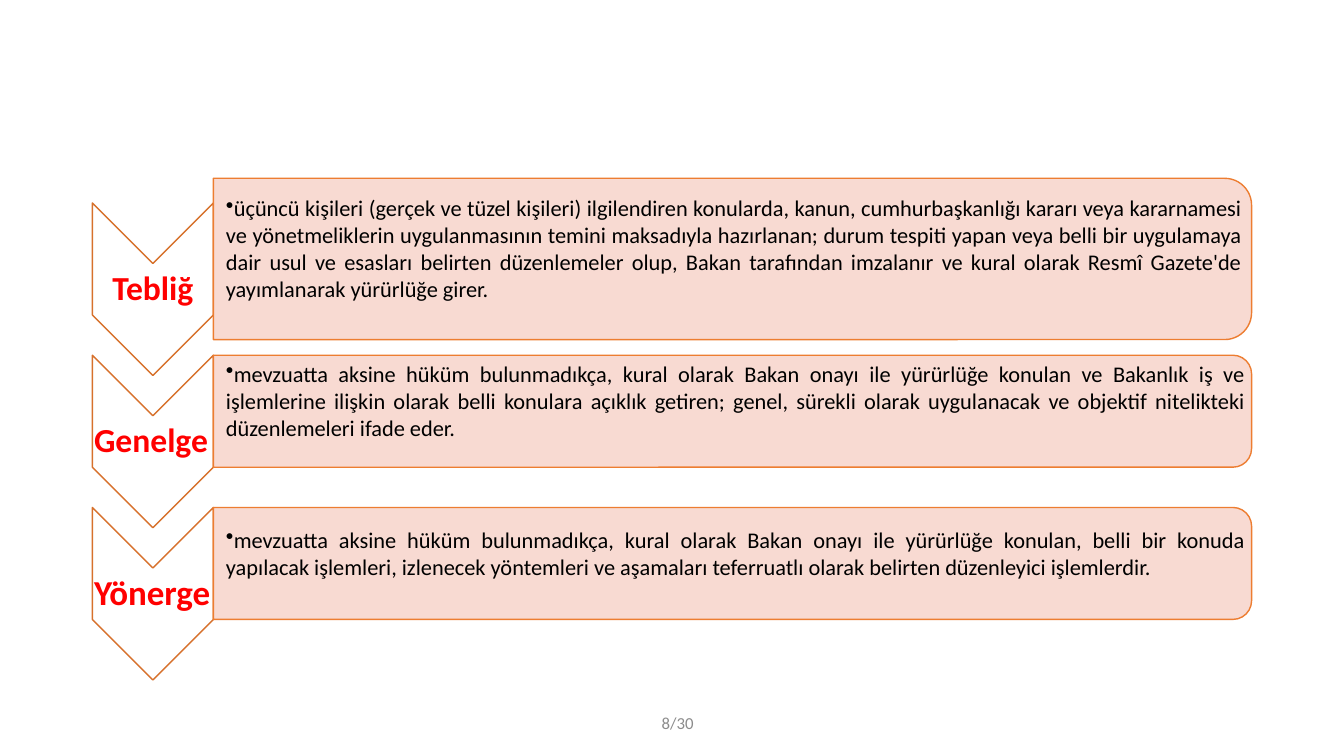
"""Build a slide that defines three kinds of regulation: Tebliğ, Genelge and Yönerge."""
from dataclasses import dataclass

from lxml.etree import SubElement
from pptx import Presentation
from pptx.dml.color import RGBColor
from pptx.enum.shapes import MSO_SHAPE as Preset
from pptx.enum.text import MSO_ANCHOR as Anchor, PP_ALIGN as Align
from pptx.oxml.ns import qn
from pptx.util import Pt


@dataclass(frozen=True)
class Theme:
    font: str = "Calibri"
    white: str = "FFFFFF"
    chevron_line: str = "D7712C"
    panel: str = "F8D7CE"
    panel_line: str = "ED7D31"
    label: str = "FF0000"
    body: str = "000000"
    page: str = "8C8C8C"
    body_size: int = 16
    page_size: int = 12


theme = Theme()


def add_turned(preset, left, middle, width, height, fill, line):
    """Add a preset turned a quarter clockwise that covers the given area."""
    shape = slide.shapes.add_shape(
        preset, Pt(left + (width - height) / 2), Pt(middle - width / 2), Pt(height), Pt(width))
    shape.rotation = 90
    shape.shadow.inherit = False
    shape.fill.solid()
    shape.fill.fore_color.rgb = RGBColor.from_string(fill)
    shape.line.color.rgb = RGBColor.from_string(line)
    shape.line.width = Pt(1)
    return shape


def add_text(text, left, middle, width, height, insets, align, size, color, bold=False, bullet=None):
    """Add a one-paragraph text box centred on the given height."""
    box = slide.shapes.add_textbox(Pt(left), Pt(middle - height / 2), Pt(width), Pt(height))
    frame = box.text_frame
    frame.word_wrap = True
    frame.vertical_anchor = Anchor.MIDDLE
    frame.margin_left, frame.margin_top, frame.margin_right, frame.margin_bottom = map(Pt, insets)
    paragraph = frame.paragraphs[0]
    paragraph.text = text
    paragraph.alignment = align
    if bullet:
        SubElement(paragraph._p.get_or_add_pPr(), qn("a:buChar"), char=bullet)
    paragraph.font.name = theme.font
    paragraph.font.size = Pt(size)
    paragraph.font.bold = bold
    paragraph.font.color.rgb = RGBColor.from_string(color)
    return paragraph


deck = Presentation()
deck.slide_width, deck.slide_height = Pt(960), Pt(540)
slide = deck.slides.add_slide(deck.slide_layouts[6])

regulations = [
    ("Tebliğ", 24, Align.CENTER, 115.2, 735.8,
     "üçüncü kişileri (gerçek ve tüzel kişileri) ilgilendiren konularda, kanun, cumhurbaşkanlığı "
     "kararı veya kararnamesi ve yönetmeliklerin uygulanmasının temini maksadıyla hazırlanan; durum "
     "tespiti yapan veya belli bir uygulamaya dair usul ve esasları belirten düzenlemeler olup, Bakan "
     "tarafından imzalanır ve kural olarak Resmî Gazete'de yayımlanarak yürürlüğe girer."),
    ("Genelge", 24, Align.JUSTIFY, 80, 738,
     "mevzuatta aksine hüküm bulunmadıkça, kural olarak Bakan onayı ile yürürlüğe konulan ve Bakanlık "
     "iş ve işlemlerine ilişkin olarak belli konulara açıklık getiren; genel, sürekli olarak "
     "uygulanacak ve objektif nitelikteki düzenlemeleri ifade eder."),
    ("Yönerge", 25, Align.JUSTIFY, 80, 738,
     "mevzuatta aksine hüküm bulunmadıkça, kural olarak Bakan onayı ile yürürlüğe konulan, belli bir "
     "konuda yapılacak işlemleri, izlenecek yöntemleri ve aşamaları teferruatlı olarak belirten "
     "düzenleyici işlemlerdir."),
]
chevron_left, chevron_width, chevron_height = 66, 86.4, 123.2
panel_left, panel_width = chevron_left + chevron_width, 741.6
first_middle, row_step, panel_rise = 206.6, 108.75, 21.6

for row, (name, name_size, name_align, panel_height, text_width, definition) in enumerate(regulations):
    middle = first_middle + row * row_step
    panel_middle = middle - panel_rise

    add_turned(Preset.CHEVRON, chevron_left, middle, chevron_width, chevron_height,
               theme.white, theme.chevron_line)
    label = add_text(name, chevron_left, middle, chevron_width, 36.8, (1.2, 1.2, 1.2, 1.2),
                     name_align, name_size, theme.label, bold=True)
    label.line_spacing = 0.9

    panel = add_turned(Preset.ROUND_2_SAME_RECTANGLE, panel_left, panel_middle, panel_width,
                       panel_height, theme.panel, theme.panel_line)
    panel_color = panel._element.spPr.find(qn("a:solidFill")).find(qn("a:srgbClr"))
    SubElement(panel_color, qn("a:alpha"), val="90000")
    add_text(definition, panel_left, panel_middle, text_width, panel_height * 0.9, (9, 0.8, 0.8, 16),
             Align.JUSTIFY, theme.body_size, theme.body, bullet="•")

add_text("8/30", 457.2, 516.6, 45.4, 25.2, (7.2, 3.6, 7.2, 3.6),
         Align.RIGHT, theme.page_size, theme.page)

deck.save("out.pptx")
